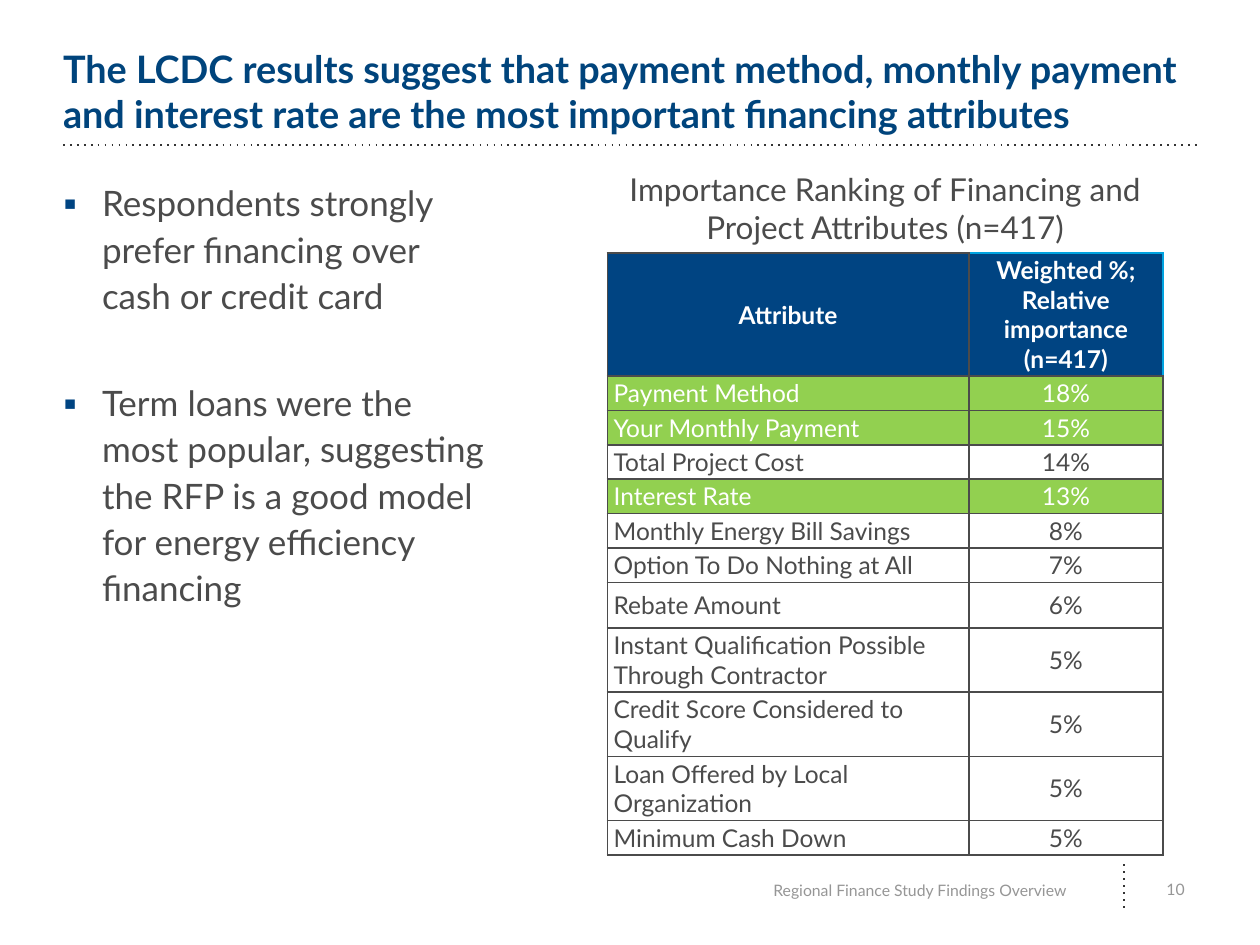
from dataclasses import dataclass
from typing import Any

from lxml import etree
from pptx import Presentation
from pptx import util as u
from pptx.dml import color
from pptx.enum import dml, shapes, text
from pptx.oxml import ns

FONT = "Lato"
TITLE_BLUE = color.RGBColor(0x00, 0x44, 0x7C)
HEADER_BLUE = color.RGBColor(0x00, 0x44, 0x82)
BRIGHT_BLUE = color.RGBColor(0x00, 0xA3, 0xE0)
GREEN = color.RGBColor(0x92, 0xD0, 0x50)
WHITE = color.RGBColor(0xFF, 0xFF, 0xFF)
TEXT_GRAY = color.RGBColor(0x4B, 0x4B, 0x4B)
FOOTER_GRAY = color.RGBColor(0x96, 0x96, 0x96)
RULE_GRAY = color.RGBColor(0x34, 0x34, 0x34)

LEFT, CENTER, RIGHT = text.PP_ALIGN.LEFT, text.PP_ALIGN.CENTER, text.PP_ALIGN.RIGHT
MIDDLE = text.MSO_ANCHOR.MIDDLE
ZERO_MARGINS = dict.fromkeys(("margin_left", "margin_top", "margin_right", "margin_bottom"), 0)


@dataclass
class Area:
    left: float
    top: float
    width: float
    height: float

    def lengths(self) -> tuple:
        return tuple(u.Inches(n) for n in (self.left, self.top, self.width, self.height))


@dataclass
class Style:
    size: float
    color: color.RGBColor
    align: Any = LEFT
    bold: bool = False


@dataclass
class Label:
    words: str
    area: Area
    style: Style
    anchor: Any


@dataclass
class Attribute:
    name: str
    share: str
    height: float = 0.27
    highlighted: bool = False


LABELS = [
    Label("Regional Finance Study Findings Overview", Area(5.35, 6.89, 3.21, 0.35),
          Style(9, FOOTER_GRAY, RIGHT), MIDDLE),
    Label("10", Area(9.05, 6.88, 0.45, 0.36), Style(9, FOOTER_GRAY, RIGHT), MIDDLE),
    Label("Importance Ranking of Financing and Project Attributes (n=417)",
          Area(4.82, 1.3, 4.41, 0.71), Style(18, TEXT_GRAY, CENTER), text.MSO_ANCHOR.TOP),
]
RULES = [Area(0.5, 1.15, 9, 0), Area(8.92, 6.86, 0, 0.37)]
BULLETS = [
    "Respondents strongly prefer financing over cash or credit card",
    "Term loans were the most popular, suggesting the RFP is a good model "
    "for energy efficiency financing",
]
HEADER = Attribute("Attribute", "Weighted %; Relative importance (n=417)", 0.97)
ATTRIBUTES = [
    Attribute("Payment Method", "18%", highlighted=True),
    Attribute("Your Monthly Payment", "15%", highlighted=True),
    Attribute("Total Project Cost", "14%"),
    Attribute("Interest Rate", "13%", highlighted=True),
    Attribute("Monthly Energy Bill Savings", "8%"),
    Attribute("Option To Do Nothing at All", "7%"),
    Attribute("Rebate Amount", "6%", 0.36),
    Attribute("Instant Qualification Possible Through Contractor", "5%", 0.51),
    Attribute("Credit Score Considered to Qualify", "5%", 0.51),
    Attribute("Loan Offered by Local Organization", "5%", 0.51),
    Attribute("Minimum Cash Down", "5%"),
]


def apply(target: Any, values: dict) -> None:
    for name, value in values.items():
        setattr(target, name, value)


def write(para: Any, words: str, style: Style) -> None:
    para.alignment = style.align
    span = para.add_run()
    span.text = words
    apply(span.font, {"name": FONT, "size": u.Pt(style.size), "bold": style.bold})
    span.font.color.rgb = style.color


def place(box: Any, area: Area) -> None:
    apply(box, dict(zip(("left", "top", "width", "height"), area.lengths())))


def add_label(page: Any, label: Label) -> None:
    frame = page.shapes.add_textbox(*label.area.lengths()).text_frame
    apply(frame, {"word_wrap": True, "vertical_anchor": label.anchor})
    write(frame.paragraphs[0], label.words, label.style)


def add_rule(page: Any, area: Area) -> None:
    left, top, width, height = area.lengths()
    rule = page.shapes.add_connector(
        shapes.MSO_CONNECTOR.STRAIGHT, left, top, left + width, top + height)
    rule.line.color.rgb = RULE_GRAY
    rule.line.width = u.Pt(1)
    rule.line.dash_style = dml.MSO_LINE.ROUND_DOT
    properties = rule._element.spPr
    properties.find(".//" + ns.qn("a:prstDash")).set("val", "dot")
    etree.SubElement(properties, ns.qn("a:effectLst"))


def add_bullet(para: Any, words: str) -> None:
    properties = para._p.get_or_add_pPr()
    properties.set("marL", str(u.Inches(0.31)))
    properties.set("indent", str(u.Inches(-0.31)))
    bullet_color = etree.SubElement(properties, ns.qn("a:buClr"))
    etree.SubElement(bullet_color, ns.qn("a:srgbClr"), val=str(HEADER_BLUE))
    etree.SubElement(properties, ns.qn("a:buFont"), typeface=FONT)
    etree.SubElement(properties, ns.qn("a:buChar"), char="▪")
    para.line_spacing = 1.1
    write(para, words, Style(20, TEXT_GRAY))


def fill_body(body: Any) -> None:
    place(body, Area(0.5, 1.41, 3.53, 4.73))
    frame = body.text_frame
    apply(frame, ZERO_MARGINS | {"margin_right": u.Inches(0.1), "word_wrap": True,
                                 "auto_size": text.MSO_AUTO_SIZE.NONE})
    for index, words in enumerate(BULLETS):
        para = frame.add_paragraph() if index else frame.paragraphs[0]
        para.space_before = u.Pt(35 if index else 0)
        add_bullet(para, words)


def fill_title(title: Any) -> None:
    place(title, Area(0.5, 0.45, 9, 0.63))
    frame = title.text_frame
    apply(frame, ZERO_MARGINS | {"word_wrap": True, "auto_size": text.MSO_AUTO_SIZE.NONE,
                                 "vertical_anchor": text.MSO_ANCHOR.BOTTOM})
    write(frame.paragraphs[0],
          "The LCDC results suggest that payment method, monthly payment and interest rate "
          "are the most important financing attributes",
          Style(21.6, TITLE_BLUE, bold=True))


def format_cell(cell: Any, words: str, style: Style, fill: Any, accents: str) -> None:
    properties = cell._tc.get_or_add_tcPr()
    for side in "LRTB":
        border = etree.SubElement(properties, ns.qn("a:ln" + side), w=str(u.Pt(1)))
        solid = etree.SubElement(border, ns.qn("a:solidFill"))
        shade = BRIGHT_BLUE if side in accents else TEXT_GRAY
        etree.SubElement(solid, ns.qn("a:srgbClr"), val=str(shade))
    if fill is None:
        cell.fill.background()
    else:
        cell.fill.solid()
        cell.fill.fore_color.rgb = fill
    apply(cell, {"vertical_anchor": MIDDLE,
                 "margin_left": u.Inches(0.05), "margin_right": u.Inches(0.05),
                 "margin_top": u.Inches(0.02), "margin_bottom": u.Inches(0.02)})
    write(cell.text_frame.paragraphs[0], words, style)


def add_ranking(page: Any) -> None:
    rows = [HEADER, *ATTRIBUTES]
    area = Area(4.82, 2.01, 4.41, sum(row.height for row in rows))
    table = page.shapes.add_table(len(rows), 2, *area.lengths()).table
    apply(table, {"first_row": False, "horz_banding": False})
    for column, width in zip(table.columns, (2.87, 1.54)):
        column.width = u.Inches(width)
    for index, row in enumerate(rows):
        table.rows[index].height = u.Inches(row.height)
        header = row is HEADER
        fill = HEADER_BLUE if header else GREEN if row.highlighted else None
        ink = TEXT_GRAY if fill is None else WHITE
        for column, words in enumerate((row.name, row.share)):
            align = CENTER if header or column else LEFT
            accents = "TR" if header and column else ""
            format_cell(table.cell(index, column), words,
                        Style(14, ink, align, header), fill, accents)


def main() -> None:
    deck = Presentation()
    apply(deck, {"slide_width": u.Inches(10), "slide_height": u.Inches(7.5)})
    page = deck.slides.add_slide(deck.slide_layouts[1])
    for rule in RULES:
        add_rule(page, rule)
    fill_title(page.shapes.title)
    fill_body(page.placeholders[1])
    for label in LABELS:
        add_label(page, label)
    add_ranking(page)
    deck.save("out.pptx")


if __name__ == "__main__":
    main()
